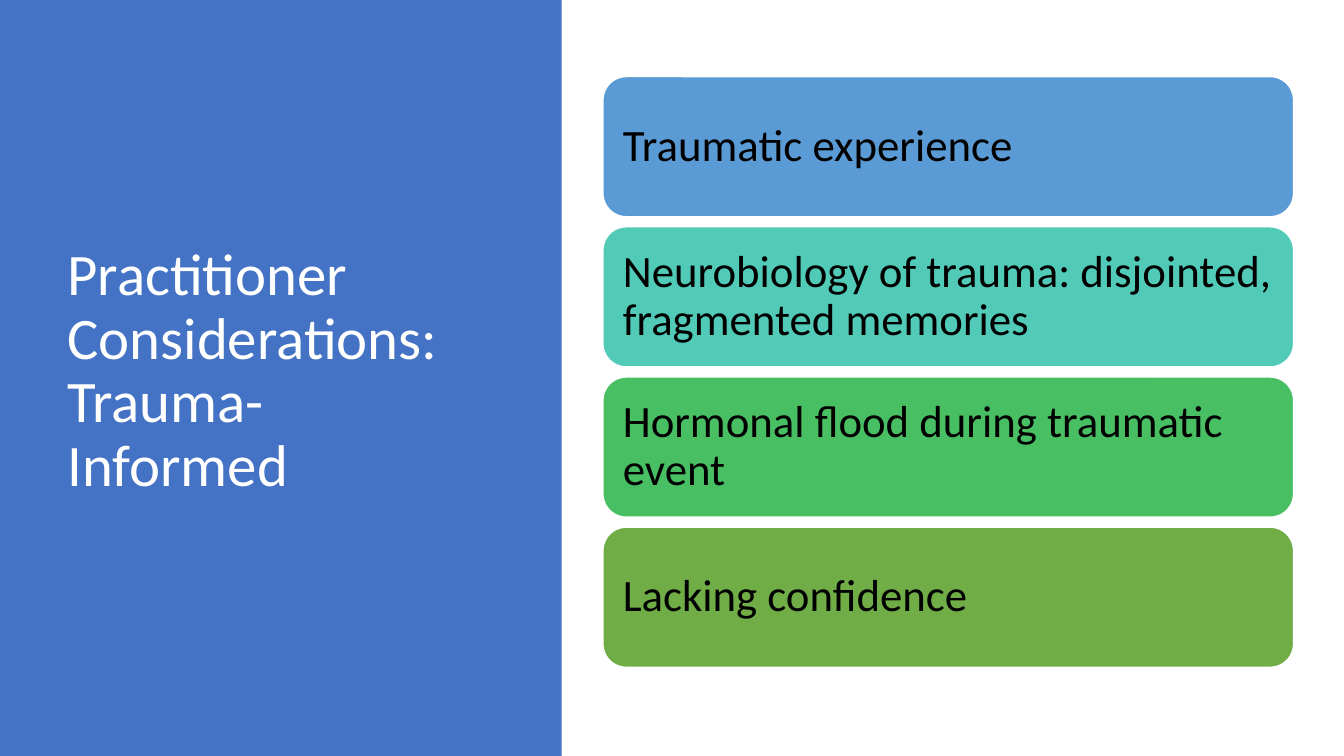
import pptx
import pptx.util
import pptx.dml.color
import pptx.enum.shapes
import pptx.enum.text

PX = 9144
SHAPE = pptx.enum.shapes.MSO_SHAPE


def px(num):
    """Turn whole px, 100 to the inch, into EMU."""
    return pptx.util.Emu(num * PX)


def paint(color, code):
    """Set a colour from a hex string."""
    color.rgb = pptx.dml.color.RGBColor.from_string(code)


class Deck:
    """Holds the style and the current slide."""

    font = "Calibri"

    def __init__(self, wide, high):
        """Open a deck with one blank slide."""
        self.prs = pptx.Presentation()
        self.prs.slide_width = px(wide)
        self.prs.slide_height = px(high)
        self.slide = self.prs.slides.add_slide(self.prs.slide_layouts[6])

    def label(self, shape, text, size, code, pad):
        """Fill a shape with left-aligned text, centred in height."""
        frame = shape.text_frame
        frame.word_wrap = True
        frame.vertical_anchor = pptx.enum.text.MSO_ANCHOR.MIDDLE
        frame.margin_left = frame.margin_right = px(pad)
        frame.margin_top = frame.margin_bottom = px(pad)
        frame.text = text
        for para in frame.paragraphs:
            para.alignment = pptx.enum.text.PP_ALIGN.LEFT
            para.line_spacing = 0.9
            for run in para.runs:
                run.font.name = self.font
                run.font.size = pptx.util.Pt(size)
                paint(run.font.color, code)

    def block(self, kind, box, fill, line=None):
        """Add a filled preset shape, outlined if a line colour is given."""
        shape = self.slide.shapes.add_shape(kind, *map(px, box))
        shape.shadow.inherit = False
        shape.fill.solid()
        paint(shape.fill.fore_color, fill)
        if line:
            paint(shape.line.color, line)
            shape.line.width = pptx.util.Pt(1)
        else:
            shape.line.fill.background()
        return shape

    def title(self, box, text):
        """Add the slide heading."""
        shape = self.slide.shapes.add_textbox(*map(px, box))
        self.label(shape, text, 42, "FFFFFF", 10)

    def card(self, box, text, fill):
        """Add a rounded card with its label."""
        shape = self.block(SHAPE.ROUNDED_RECTANGLE, box, fill, "FFFFFF")
        self.label(shape, text, 32, "000000", 13)


def main():
    """Build and save the slide."""
    deck = Deck(1333, 750)
    deck.block(SHAPE.RECTANGLE, (0, 0, 557, 750), "4472C4")
    deck.title((57, 68, 416, 602),
               "Practitioner Considerations:\vTrauma-Informed")
    cards = [
        ("Traumatic experience", "5B9BD5"),
        ("Neurobiology of trauma: disjointed, fragmented memories", "52CAB8"),
        ("Hormonal flood during traumatic event", "49BF64"),
        ("Lacking confidence", "70AD47"),
    ]
    for row, (text, fill) in enumerate(cards):
        deck.card((598, 76 + 149 * row, 685, 139), text, fill)
    deck.prs.save("out.pptx")


if __name__ == "__main__":
    main()
